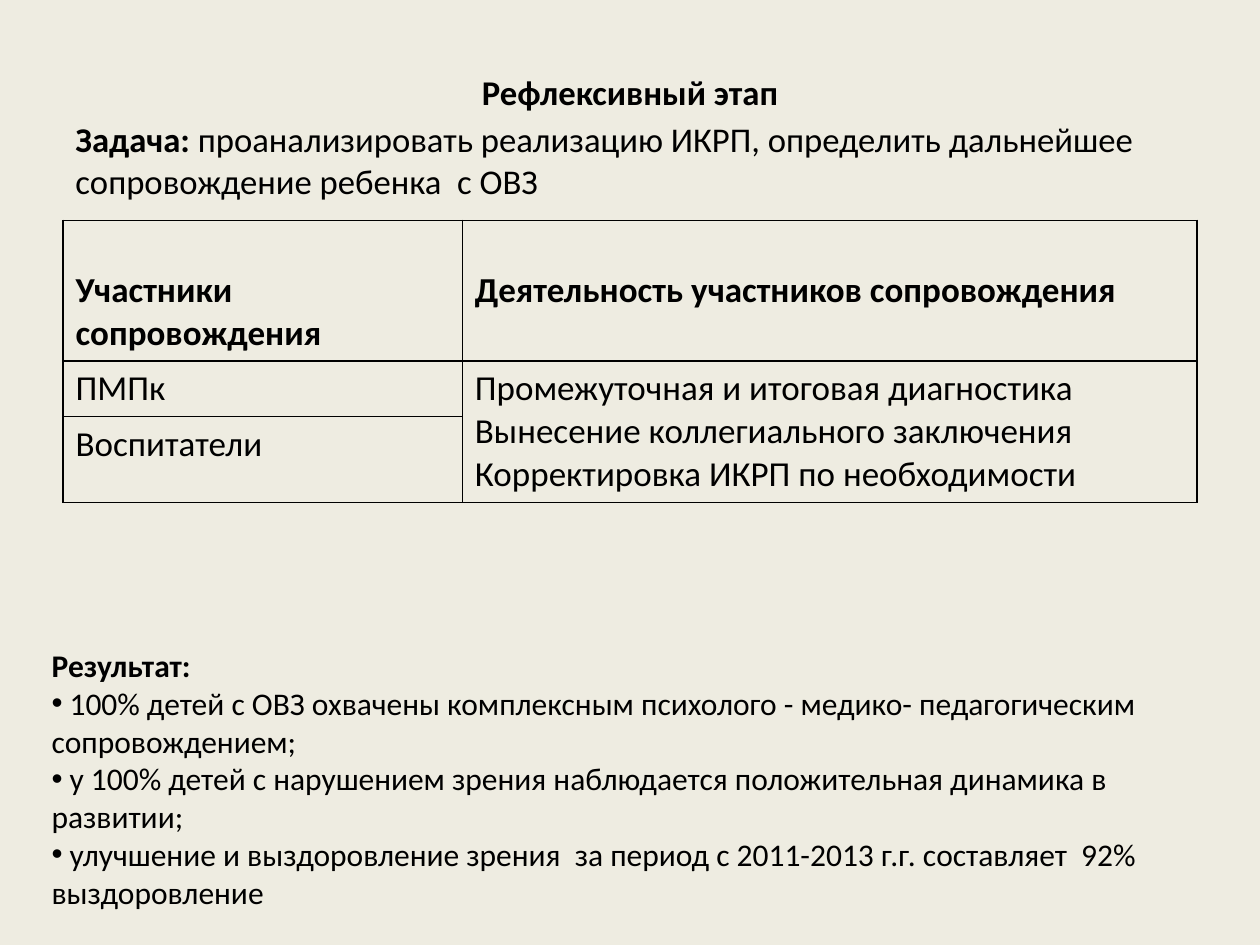
from dataclasses import dataclass

from lxml import etree
from pptx import Presentation
from pptx.dml.color import RGBColor
from pptx.enum.text import MSO_ANCHOR, PP_ALIGN
from pptx.oxml.ns import qn
from pptx.util import Cm, Pt

TOP, MIDDLE, BOTTOM = MSO_ANCHOR.TOP, MSO_ANCHOR.MIDDLE, MSO_ANCHOR.BOTTOM
LEFT, CENTER = PP_ALIGN.LEFT, PP_ALIGN.CENTER

FONT = "Calibri"
COLORS = {"background": "EEECE1", "ink": "000000"}
TITLE_SIZE, TABLE_SIZE, RESULT_SIZE = 19.8, 20, 18
COLUMN_WIDTHS = (8.05, 14.81)
ROW_HEIGHTS = (2.84, 1.12, 1.73)


@dataclass
class Line:
    text: str
    bold: bool = False
    lead: str = ""
    align: PP_ALIGN = LEFT
    space_before: float = 0
    bullet: bool = False


@dataclass
class TableCell:
    row: int
    column: int
    lines: list[Line]
    anchor: MSO_ANCHOR = TOP


TITLE = [
    Line("Рефлексивный этап", bold=True, align=CENTER),
    Line("проанализировать реализацию ИКРП, определить дальнейшее "
         "сопровождение ребенка  с ОВЗ", lead="Задача: ", space_before=3.4),
]
CELLS = [
    TableCell(0, 0, [Line("Участники сопровождения", bold=True)], BOTTOM),
    TableCell(0, 1, [Line("Деятельность участников сопровождения", bold=True)], MIDDLE),
    TableCell(1, 0, [Line("ПМПк")]),
    TableCell(1, 1, [Line("Промежуточная и итоговая диагностика"),
                     Line("Вынесение коллегиального заключения"),
                     Line("Корректировка ИКРП по необходимости")]),
    TableCell(2, 0, [Line("Воспитатели")]),
]
RESULTS = [
    Line("Результат:", bold=True),
    Line(" 100% детей с ОВЗ охвачены комплексным психолого - медико- "
         "педагогическим сопровождением;", bullet=True),
    Line(" у 100% детей с нарушением зрения наблюдается положительная "
         "динамика в развитии;", bullet=True),
    Line(" улучшение и выздоровление зрения  за период с 2011-2013 г.г. "
         "составляет  92% выздоровление", bullet=True),
]


def add_bullet(para) -> None:
    properties = para._p.get_or_add_pPr()
    properties.set("marL", "0")
    properties.set("indent", "0")
    etree.SubElement(properties, qn("a:buFont")).set("typeface", "Arial")
    etree.SubElement(properties, qn("a:buChar")).set("char", "•")


def add_span(para, text: str, size: float, bold: bool) -> None:
    span = para.add_run()
    span.text = text
    span.font.name = FONT
    span.font.size = Pt(size)
    span.font.bold = bold
    span.font.color.rgb = RGBColor.from_string(COLORS["ink"])


def write_lines(frame, lines: list[Line], size: float) -> None:
    frame.word_wrap = True
    for index, line in enumerate(lines):
        para = frame.add_paragraph() if index else frame.paragraphs[0]
        para.alignment = line.align
        para.space_before = Pt(line.space_before)
        if line.bullet:
            add_bullet(para)
        if line.lead:
            add_span(para, line.lead, size, True)
        add_span(para, line.text, size, line.bold)


def add_text(page, left: float, top: float, width: float, height: float,
             lines: list[Line], size: float):
    """Add a text box, with its place in centimetres, and return its frame."""
    box = page.shapes.add_textbox(Cm(left), Cm(top), Cm(width), Cm(height))
    write_lines(box.text_frame, lines, size)
    return box.text_frame


def clear_with_borders(cell) -> None:
    """Give the cell thin lines on all sides and no fill."""
    properties = cell._tc.get_or_add_tcPr()
    for side in ("lnL", "lnR", "lnT", "lnB"):
        border = etree.SubElement(properties, qn(f"a:{side}"), w=str(Pt(1)))
        fill = etree.SubElement(border, qn("a:solidFill"))
        etree.SubElement(fill, qn("a:srgbClr"), val=COLORS["ink"])
    cell.fill.background()


def add_participants_table(page) -> None:
    table = page.shapes.add_table(
        len(ROW_HEIGHTS), len(COLUMN_WIDTHS), Cm(1.27), Cm(4.44),
        Cm(sum(COLUMN_WIDTHS)), Cm(sum(ROW_HEIGHTS))).table
    table.first_row = False
    table.horz_banding = False
    for column, width in zip(table.columns, COLUMN_WIDTHS):
        column.width = Cm(width)
    for row, height in zip(table.rows, ROW_HEIGHTS):
        row.height = Cm(height)
    for cell in table.iter_cells():
        clear_with_borders(cell)
    table.cell(1, 1).merge(table.cell(2, 1))
    for item in CELLS:
        cell = table.cell(item.row, item.column)
        cell.vertical_anchor = item.anchor
        write_lines(cell.text_frame, item.lines, TABLE_SIZE)


def main() -> None:
    deck = Presentation()
    deck.slide_width, deck.slide_height = Cm(25.4), Cm(19.05)
    page = deck.slides.add_slide(deck.slide_layouts[6])
    page.background.fill.solid()
    page.background.fill.fore_color.rgb = RGBColor.from_string(COLORS["background"])

    title = add_text(page, 1.27, 0.76, 22.86, 3.2, TITLE, TITLE_SIZE)
    title.margin_top = Cm(0.66)
    add_participants_table(page)
    add_text(page, 0.79, 12.9, 24, 5.64, RESULTS, RESULT_SIZE)
    deck.save("out.pptx")


if __name__ == "__main__":
    main()
